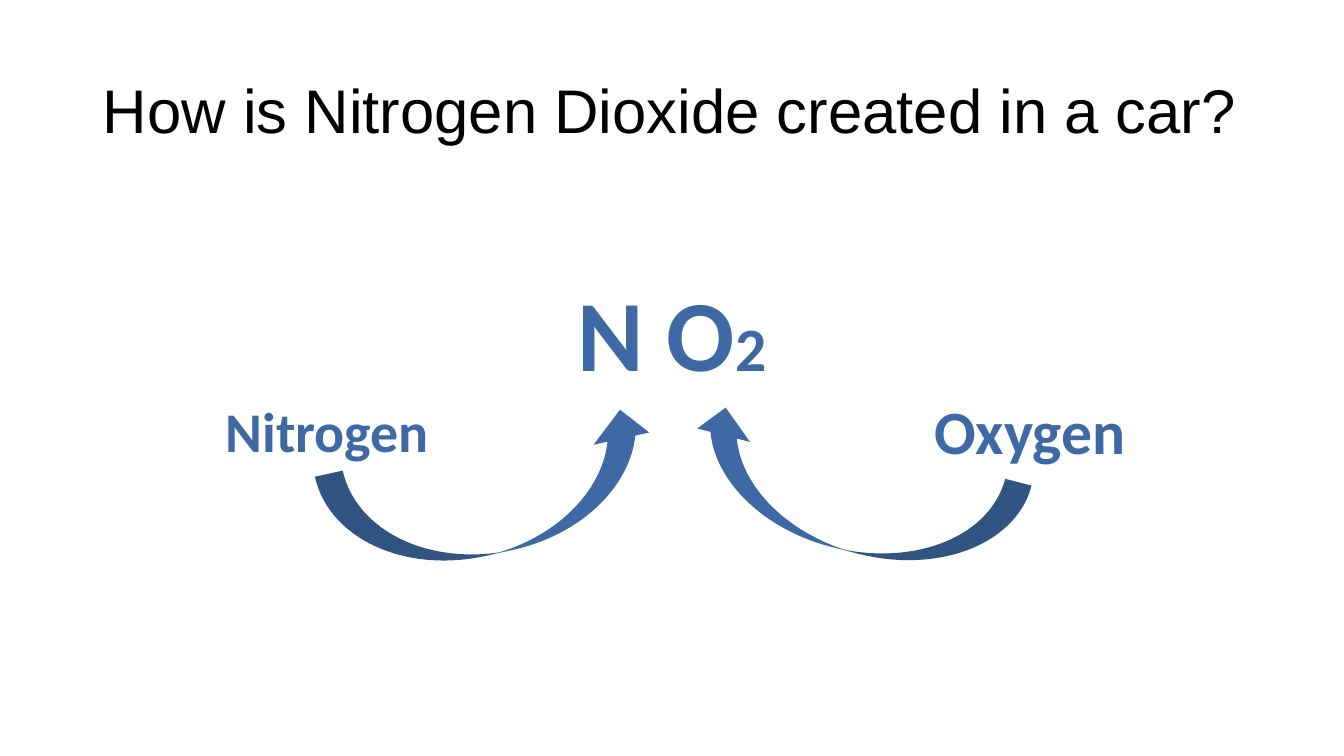
from dataclasses import dataclass
from pptx import Presentation
from pptx.dml.color import RGBColor as Rgb
from pptx.enum.shapes import MSO_SHAPE as Kind
from pptx.enum.text import MSO_ANCHOR as Anchor, MSO_AUTO_SIZE as Fit, PP_ALIGN as Align
from pptx.util import Inches, Pt


@dataclass(frozen=True)
class Theme:
    blue: str = "3E69A4"
    black: str = "000000"
    head: str = "Arial"
    body: str = "Calibri"
    huge: int = 72
    large: int = 44
    mid: int = 40


look = Theme()

title = ("How is Nitrogen Dioxide created in a car?", (0.92, 0.4, 11.5, 1.45))
labels = [
    ([("N O", look.huge), ("2", look.large)], (3.42, 2.64, 6.49, 1.31)),
    ([("Nitrogen", look.mid)], (0, 3.88, 6.49, 0.77)),
    ([("Oxygen", look.large)], (6.97, 3.85, 6.49, 0.84)),
]
arrows = [
    ((4.33, 3.23, 1.13, 3.38), 77.6, ("flipH", "flipV")),
    ((7.91, 3.22, 1.08, 3.4), 104.3, ("flipH",)),
]


def write(frame, runs, font=look.body, color=look.blue, bold=True,
          align=Align.CENTER, anchor=Anchor.TOP, space=1.0):
    frame.word_wrap = True
    frame.vertical_anchor = anchor
    para = frame.paragraphs[0]
    para.alignment = align
    para.line_spacing = space
    for text, size in runs:
        run = para.add_run()
        run.text = text
        run.font.name = font
        run.font.size = Pt(size)
        run.font.bold = bold
        run.font.color.rgb = Rgb.from_string(color)


def main():
    deck = Presentation()
    deck.slide_width, deck.slide_height = Inches(13.33), Inches(7.5)
    slide = deck.slides.add_slide(deck.slide_layouts[5])
    shapes = slide.shapes

    text, box = title
    head = shapes.title
    head.left, head.top, head.width, head.height = map(Inches, box)
    write(head.text_frame, [(text, look.large)], font=look.head, color=look.black,
          bold=False, align=Align.LEFT, anchor=Anchor.MIDDLE, space=0.9)

    for box, turn, flips in arrows:
        arrow = shapes.add_shape(Kind.CURVED_RIGHT_ARROW, *map(Inches, box))
        arrow.rotation = turn
        arrow.shadow.inherit = False
        arrow.fill.solid()
        arrow.fill.fore_color.rgb = Rgb.from_string(look.blue)
        arrow.line.fill.background()
        for flip in flips:
            arrow.element.spPr.xfrm.set(flip, "1")

    for runs, box in labels:
        frame = shapes.add_textbox(*map(Inches, box)).text_frame
        write(frame, runs)
        frame.auto_size = Fit.SHAPE_TO_FIT_TEXT

    deck.save("out.pptx")


if __name__ == "__main__":
    main()
